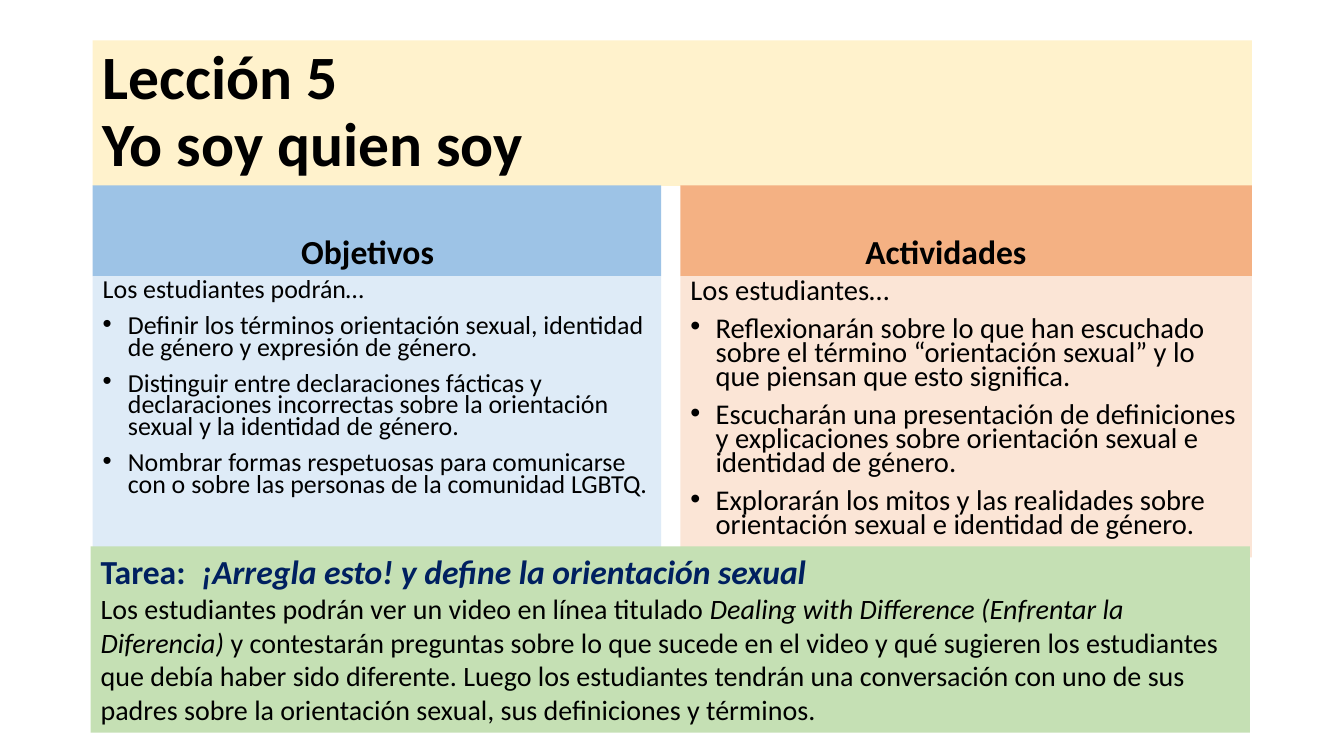
from lxml import etree
from pptx import Presentation
from pptx.dml.color import RGBColor
from pptx.enum.shapes import MSO_SHAPE
from pptx.enum.text import MSO_ANCHOR, MSO_AUTO_SIZE, PP_ALIGN
from pptx.oxml.ns import qn
from pptx.util import Pt

LEFT, CENTER = PP_ALIGN.LEFT, PP_ALIGN.CENTER
TOP, MIDDLE, BOTTOM = MSO_ANCHOR.TOP, MSO_ANCHOR.MIDDLE, MSO_ANCHOR.BOTTOM
NO_AUTOFIT = MSO_AUTO_SIZE.NONE
RECTANGLE = MSO_SHAPE.RECTANGLE
COMPARISON_LAYOUT = 4
FONT = "Calibri"
COLORS = {
    "text": "000000",
    "homework_title": "002060",
    "title": "FFF2CC",
    "goals_head": "9DC3E6",
    "goals": "DEEBF7",
    "activities_head": "F4B183",
    "activities": "FBE5D6",
    "homework": "C5E0B4",
}
MARGIN, FULL_WIDTH = 66.2, 828
HEAD_TOP, HEAD_HEIGHT = 132.5, 64.8
LIST_TOP, LIST_HEIGHT = HEAD_TOP + HEAD_HEIGHT, 200.9

COLUMNS = [
    dict(name="goals", left=MARGIN, width=406, size=18.5, heading="Objetivos\t",
         intro="Los estudiantes podrán…", items=[
             "Definir los términos orientación sexual, identidad de género y expresión de género.",
             "Distinguir entre declaraciones fácticas y declaraciones incorrectas sobre la "
             "orientación sexual y la identidad de género.",
             "Nombrar formas respetuosas para comunicarse con o sobre las personas de la "
             "comunidad LGBTQ.",
         ]),
    dict(name="activities", left=486, width=408.2, size=20.4, heading="Actividades\t",
         intro="Los estudiantes…", items=[
             "Reflexionarán sobre lo que han escuchado sobre el término “orientación sexual” "
             "y lo que piensan que esto significa.",
             "Escucharán una presentación de definiciones y explicaciones sobre orientación "
             "sexual e identidad de género.",
             "Explorarán los mitos y las realidades sobre orientación sexual e identidad de género.",
         ]),
]


def add_text(para, text, size=20, color="text", bold=False, italic=False):
    for index, line in enumerate(text.split("\n")):
        if index:
            para.add_line_break()
        span = para.add_run()
        span.text = line
        font = span.font
        font.name, font.size = FONT, Pt(size)
        font.bold, font.italic = bold, italic
        font.color.rgb = RGBColor.from_string(COLORS[color])


def format_panel(box, left, top, width, height, fill, anchor):
    box.left, box.top, box.width, box.height = Pt(left), Pt(top), Pt(width), Pt(height)
    box.fill.solid()
    box.fill.fore_color.rgb = RGBColor.from_string(COLORS[fill])
    frame = box.text_frame
    frame.word_wrap = True
    frame.auto_size = NO_AUTOFIT
    frame.vertical_anchor = anchor
    return frame


def next_para(frame, first=False, align=LEFT, line_spacing=1.0, before=0):
    para = frame.paragraphs[0] if first else frame.add_paragraph()
    para.alignment = align
    para.line_spacing = line_spacing
    para.space_before = Pt(before)
    return para


def set_bullet(para, char=None):
    properties = para._p.get_or_add_pPr()
    indent = Pt(18) if char else 0
    properties.set("marL", str(indent))
    properties.set("indent", str(-indent))
    if char:
        etree.SubElement(properties, qn("a:buFont")).set("typeface", "Arial")
        etree.SubElement(properties, qn("a:buChar")).set("char", char)
    else:
        etree.SubElement(properties, qn("a:buNone"))


def fill_title(box):
    frame = format_panel(box, MARGIN, 28.8, FULL_WIDTH, 104, "title", MIDDLE)
    para = next_para(frame, first=True, line_spacing=0.9)
    add_text(para, "Lección 5\nYo soy quien soy", size=44, bold=True)


def fill_column(head_box, list_box, name, left, width, size, heading, intro, items):
    head = format_panel(head_box, left, HEAD_TOP, width, HEAD_HEIGHT, name + "_head", BOTTOM)
    add_text(next_para(head, first=True, align=CENTER), heading, size=24, bold=True)
    frame = format_panel(list_box, left, LIST_TOP, width, LIST_HEIGHT, name, TOP)
    for index, text in enumerate([intro, *items]):
        para = next_para(frame, first=index == 0, line_spacing=0.7, before=10)
        set_bullet(para, "•" if index else None)
        add_text(para, text, size=size)


def add_homework(page):
    box = page.shapes.add_shape(RECTANGLE, 0, 0, 0, 0)
    box.shadow.inherit = False
    box.line.fill.background()
    frame = format_panel(box, 64.8, 390.2, FULL_WIDTH, 133.2, "homework", TOP)
    para = next_para(frame, first=True)
    add_text(para, "Tarea:\t", size=24, color="homework_title", bold=True)
    add_text(para, "¡Arregla esto! y define la orientación sexual",
             size=24, color="homework_title", bold=True, italic=True)
    para = next_para(frame)
    add_text(para, "Los estudiantes podrán ver un video en línea titulado ")
    add_text(para, "Dealing with Difference (Enfrentar la Diferencia) ", italic=True)
    add_text(para, "y contestarán preguntas sobre lo que sucede en el video y qué sugieren los "
                   "estudiantes que debía haber sido diferente. Luego los estudiantes tendrán una "
                   "conversación con uno de sus padres sobre la orientación sexual, sus "
                   "definiciones y términos.")


def main():
    deck = Presentation()
    deck.slide_width, deck.slide_height = Pt(960), Pt(540)
    page = deck.slides.add_slide(deck.slide_layouts[COMPARISON_LAYOUT])
    title, *boxes = page.placeholders
    fill_title(title)
    for head_box, list_box, column in zip(boxes[::2], boxes[1::2], COLUMNS):
        fill_column(head_box, list_box, **column)
    add_homework(page)
    deck.save("out.pptx")


if __name__ == "__main__":
    main()
